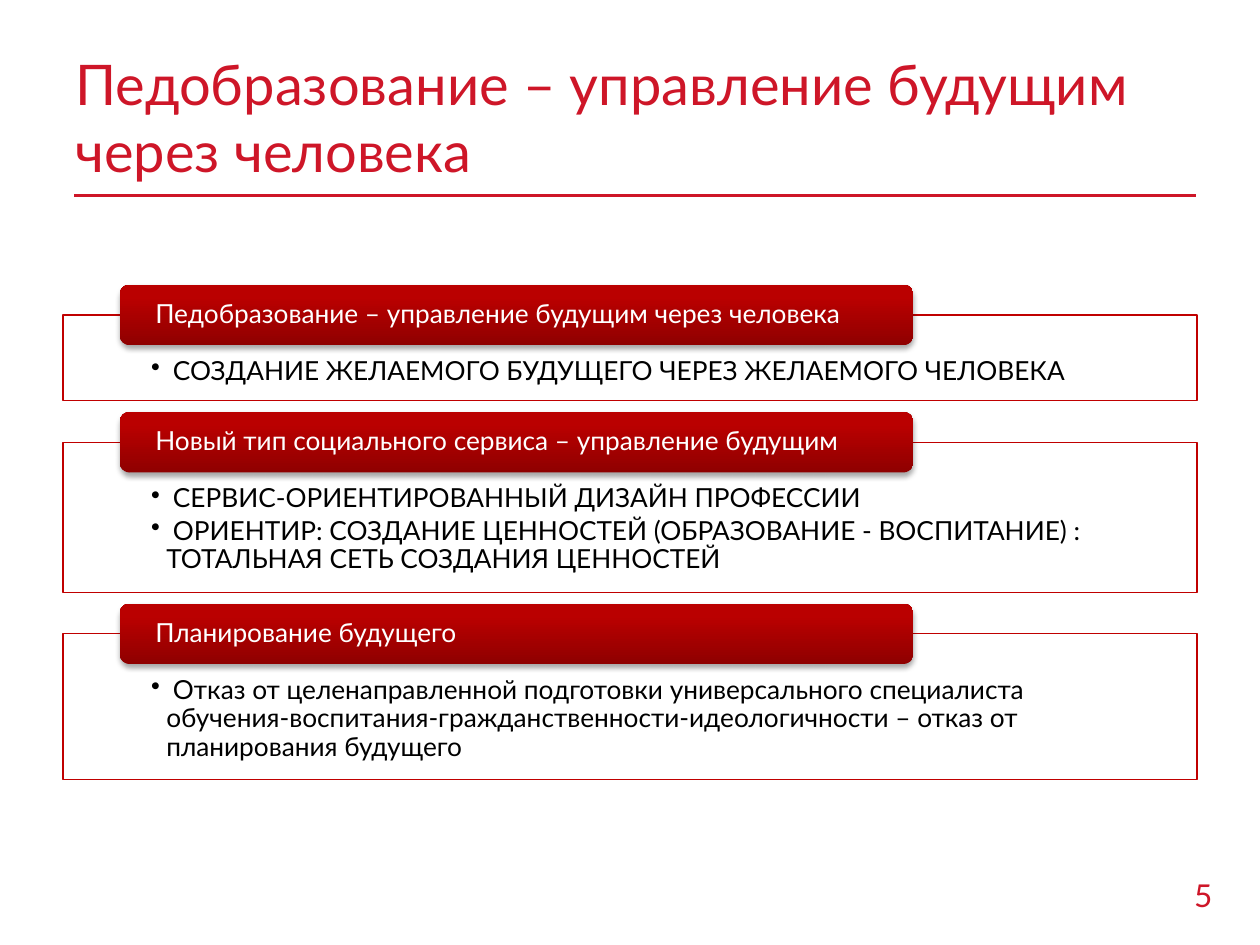
from lxml import etree
from pptx import Presentation
from pptx.dml.color import RGBColor
from pptx.enum.shapes import MSO_CONNECTOR, MSO_SHAPE
from pptx.enum.text import MSO_ANCHOR, PP_ALIGN
from pptx.oxml.ns import qn
from pptx.util import Emu, Pt

EMU_PER_PX = 9144
RECT, ROUNDED = MSO_SHAPE.RECTANGLE, MSO_SHAPE.ROUNDED_RECTANGLE
STRAIGHT = MSO_CONNECTOR.STRAIGHT
TOP, MIDDLE = MSO_ANCHOR.TOP, MSO_ANCHOR.MIDDLE
LEFT, RIGHT = PP_ALIGN.LEFT, PP_ALIGN.RIGHT

CRIMSON, DARK_RED, BLACK, WHITE = "CE1628", "C00000", "000000", "FFFFFF"
TAB_GRADIENT = [(0, "8F0000"), (80, "BA0000"), (100, "BB0000")]
CARD_LEFT, CARD_WIDTH, FIRST_CARD_TOP, CARD_GAP = 50, 900, 250, 33
TAB_LEFT, TAB_WIDTH, TAB_HEIGHT, TAB_RISE = 95, 630, 48, 24

SECTIONS = [
    (68, "Педобразование – управление будущим через человека",
     [" СОЗДАНИЕ ЖЕЛАЕМОГО БУДУЩЕГО ЧЕРЕЗ ЖЕЛАЕМОГО ЧЕЛОВЕКА"]),
    (119, "Новый тип социального сервиса – управление будущим",
     [" СЕРВИС-ОРИЕНТИРОВАННЫЙ ДИЗАЙН ПРОФЕССИИ",
      " ОРИЕНТИР: СОЗДАНИЕ ЦЕННОСТЕЙ (ОБРАЗОВАНИЕ - ВОСПИТАНИЕ) : "
      "ТОТАЛЬНАЯ СЕТЬ СОЗДАНИЯ ЦЕННОСТЕЙ"]),
    (116, "Планирование будущего",
     [" Отказ от целенаправленной подготовки универсального специалиста "
      "обучения-воспитания-гражданственности-идеологичности – отказ от "
      "планирования будущего"]),
]


def px(length):
    return Emu(length * EMU_PER_PX)


def rgb(hex_color):
    return RGBColor.from_string(hex_color)


def add_xml(parent, tag, **attributes):
    return etree.SubElement(parent, qn(tag), {k: str(v) for k, v in attributes.items()})


def add_color(parent, hex_color, alpha=100):
    color = add_xml(parent, "a:srgbClr", val=hex_color)
    if alpha < 100:
        add_xml(color, "a:alpha", val=alpha * 1000)


class SlideBuilder:
    font = "Lato"

    def __init__(self, slide):
        self.slide = slide

    def set_text(self, shape, lines, size, color, anchor=MIDDLE, align=LEFT,
                 insets=(10, 5, 10, 5), bullet=False, spacing=1.0):
        frame = shape.text_frame
        left, top, right, bottom = map(px, insets)
        frame_format = {
            "word_wrap": True, "vertical_anchor": anchor, "margin_left": left,
            "margin_top": top, "margin_right": right, "margin_bottom": bottom,
        }
        for name, value in frame_format.items():
            setattr(frame, name, value)
        for index, line in enumerate(lines):
            paragraph = frame.add_paragraph() if index else frame.paragraphs[0]
            paragraph.alignment = align
            paragraph.line_spacing = spacing
            run = paragraph.add_run()
            run.text = line
            run.font.name = self.font
            run.font.size = Pt(size)
            run.font.color.rgb = rgb(color)
            if bullet:
                paragraph.space_after = Pt(2.5)
                properties = paragraph._p.get_or_add_pPr()
                properties.set("marL", str(px(12)))
                properties.set("indent", str(px(-12)))
                add_xml(properties, "a:buChar", char="•")

    def text(self, box, line, size, color, **options):
        shape = self.slide.shapes.add_textbox(*map(px, box))
        self.set_text(shape, [line], size, color, **options)

    def rule(self, left, right, y, color, width):
        line = self.slide.shapes.add_connector(STRAIGHT, px(left), px(y), px(right), px(y))
        line.line.color.rgb = rgb(color)
        line.line.width = Pt(width)
        add_xml(line._element.spPr, "a:effectLst")

    def shape(self, kind, box):
        shape = self.slide.shapes.add_shape(kind, *map(px, box))
        shape.shadow.inherit = False
        return shape

    def card(self, box, bullets):
        card = self.shape(RECT, box)
        card.fill.solid()
        card.fill.fore_color.rgb = rgb(WHITE)
        fill_color = card._element.spPr.find(qn("a:solidFill"))[0]
        add_xml(fill_color, "a:alpha", val=90000)
        card.line.color.rgb = rgb(DARK_RED)
        card.line.width = Pt(0.75)
        self.set_text(card, bullets, 15, BLACK, anchor=TOP, insets=(70, 34, 70, 12),
                      bullet=True, spacing=0.9)

    def tab(self, box, heading):
        tab = self.shape(ROUNDED, box)
        tab.line.fill.background()
        tab.fill.gradient()
        tab.fill.gradient_angle = 90
        properties = tab._element.spPr
        stops = properties.find(qn("a:gradFill")).find(qn("a:gsLst"))
        for stop in list(stops):
            stops.remove(stop)
        for position, color in TAB_GRADIENT:
            add_color(add_xml(stops, "a:gs", pos=position * 1000), color)
        shadow = add_xml(properties.find(qn("a:effectLst")), "a:outerShdw",
                         blurRad=Pt(3.1), dist=Pt(1.8), dir=5400000, rotWithShape=0)
        add_color(shadow, BLACK, 35)
        self.set_text(tab, [heading], 15, WHITE, insets=(26, 0, 26, 0), spacing=0.9)


def main():
    deck = Presentation()
    deck.slide_width, deck.slide_height = px(1000), px(750)
    builder = SlideBuilder(deck.slides.add_slide(deck.slide_layouts[6]))

    builder.text((50, 30, 900, 125), SECTIONS[0][1], 32, CRIMSON)
    builder.rule(59, 949, 155, CRIMSON, 2)
    builder.text((739, 690, 233, 40), "5", 18, CRIMSON, align=RIGHT)

    top = FIRST_CARD_TOP
    for height, heading, bullets in SECTIONS:
        builder.card((CARD_LEFT, top, CARD_WIDTH, height), bullets)
        builder.tab((TAB_LEFT, top - TAB_RISE, TAB_WIDTH, TAB_HEIGHT), heading)
        top += height + CARD_GAP

    deck.save("out.pptx")


if __name__ == "__main__":
    main()
